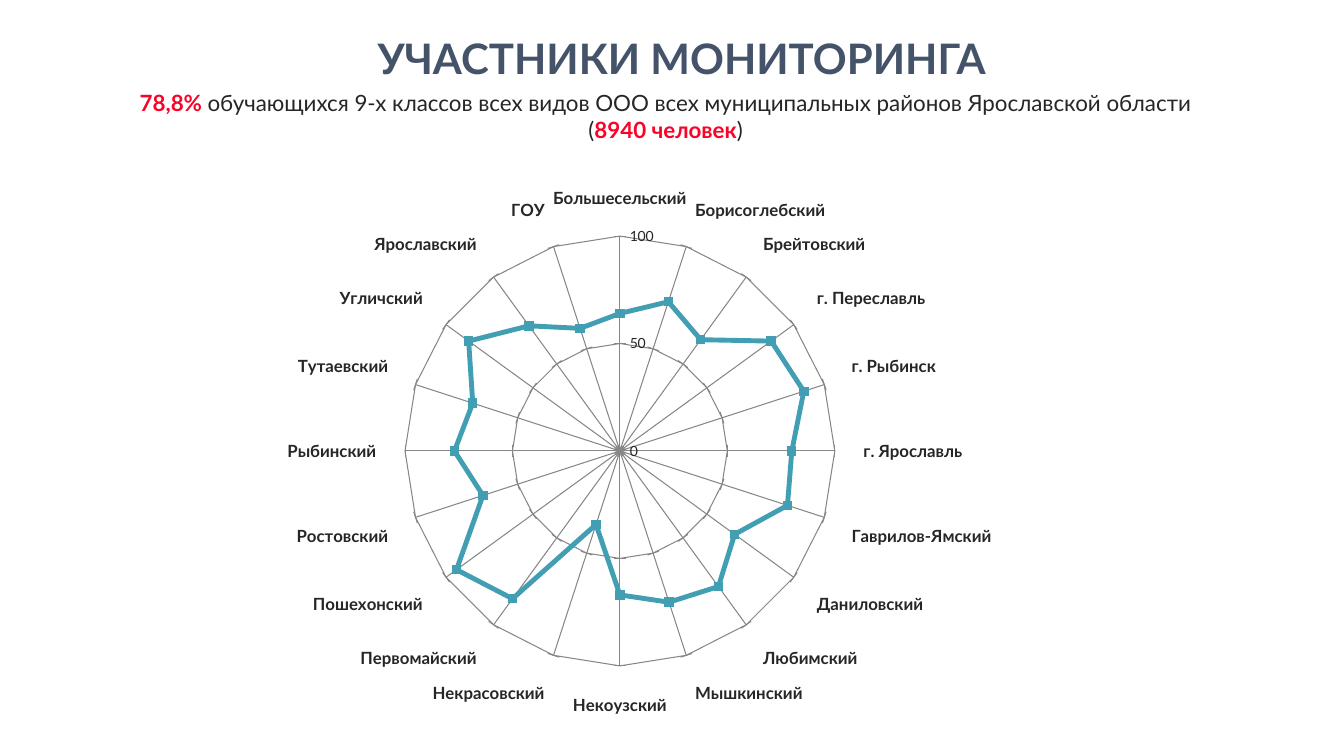
from dataclasses import dataclass

from lxml import etree
from pptx import Presentation
from pptx.chart.data import CategoryChartData
from pptx.dml.color import RGBColor
from pptx.enum.chart import XL_CHART_TYPE, XL_MARKER_STYLE, XL_TICK_MARK
from pptx.enum.text import MSO_ANCHOR, MSO_AUTO_SIZE, PP_ALIGN
from pptx.oxml.ns import qn
from pptx.util import Pt

RADAR = XL_CHART_TYPE.RADAR_MARKERS
SQUARE = XL_MARKER_STYLE.SQUARE
CROSS, OUT = XL_TICK_MARK.CROSS, XL_TICK_MARK.OUTSIDE
TOP, CENTER, FIXED = MSO_ANCHOR.TOP, PP_ALIGN.CENTER, MSO_AUTO_SIZE.NONE

FACE = "Lato"
HUES = {"title": "44536A", "text": "262626", "accent": "F90329",
        "line": "429EB2", "grid": "868686"}


@dataclass
class Box:
    left: float
    top: float
    width: float
    height: float


@dataclass
class Part:
    text: str
    hue: str = "text"
    bold: bool = False


@dataclass
class Block:
    box: Box
    size: float
    space: float
    lines: list[list[Part]]


TITLE = Block(Box(34.5, 1.4, 905, 54.7), 30, 1.5,
              [[Part("УЧАСТНИКИ МОНИТОРИНГА", "title", True)]])
SCOPE = Block(Box(34.5, 59.8, 882, 46), 16, 1.0, [
    [Part("78,8% ", "accent", True),
     Part("обучающихся 9-х классов всех видов ООО всех муниципальных "
          "районов Ярославской области")],
    [Part("("), Part("8940 человек", "accent", True), Part(")")],
])
CHART = Box(88.6, 120.2, 738, 404)
PLOT = {"x": 0.27, "y": 0.12, "w": 0.42, "h": 0.76}
SHARES = {
    "Большесельский": 64, "Борисоглебский": 73, "Брейтовский": 64,
    "г. Переславль": 87, "г. Рыбинск": 90, "г. Ярославль": 80,
    "Гаврилов-Ямский": 82, "Даниловский": 66, "Любимский": 78,
    "Мышкинский": 74, "Некоузский": 67, "Некрасовский": 36,
    "Первомайский": 85, "Пошехонский": 94, "Ростовский": 67,
    "Рыбинский": 77, "Тутаевский": 72, "Угличский": 87,
    "Ярославский": 72, "ГОУ": 60,
}


def tint(name: str) -> RGBColor:
    return RGBColor.from_string(HUES[name])


def style(font, size: float, hue: str, bold: bool) -> None:
    font.name, font.size, font.bold = FACE, Pt(size), bold
    font.color.rgb = tint(hue)


def fill_text(shape, block: Block) -> None:
    box = block.box
    shape.left, shape.top = Pt(box.left), Pt(box.top)
    shape.width, shape.height = Pt(box.width), Pt(box.height)
    frame = shape.text_frame
    frame.word_wrap, frame.auto_size = True, FIXED
    frame.vertical_anchor = TOP
    for i, line in enumerate(block.lines):
        para = frame.add_paragraph() if i else frame.paragraphs[0]
        para.alignment, para.line_spacing = CENTER, block.space
        para.space_before = Pt(0)
        # Centred lines carry no bullet or indent
        props = para._p.get_or_add_pPr()
        props.set("marL", "0")
        props.set("indent", "0")
        etree.SubElement(props, qn("a:buNone"))
        for part in line:
            run = para.add_run()
            run.text = part.text
            style(run.font, block.size, part.hue, part.bold)


def style_axis(axis, size: float, bold: bool, tick) -> None:
    style(axis.tick_labels.font, size, "text", bold)
    axis.major_tick_mark = tick
    axis.has_major_gridlines = True
    for form in (axis.format, axis.major_gridlines.format):
        form.line.color.rgb = tint("grid")
        form.line.width = Pt(0.75)


def place_plot(chart) -> None:
    area = chart._chartSpace.chart.plotArea
    for old in area.findall(qn("c:layout")):
        area.remove(old)
    layout = etree.Element(qn("c:layout"))
    area.insert(0, layout)
    inner = etree.SubElement(layout, qn("c:manualLayout"))
    marks = {"layoutTarget": "inner", "xMode": "edge", "yMode": "edge", **PLOT}
    for tag, val in marks.items():
        etree.SubElement(inner, qn("c:" + tag)).set("val", str(val))


def add_radar(slide, box: Box) -> None:
    data = CategoryChartData()
    data.categories = list(SHARES)
    data.add_series("Series 1", list(SHARES.values()))
    chart = slide.shapes.add_chart(
        RADAR, Pt(box.left), Pt(box.top), Pt(box.width), Pt(box.height), data
    ).chart
    chart.has_legend = chart.has_title = False
    style(chart.font, 18, "text", False)
    place_plot(chart)

    # Axes
    style_axis(chart.category_axis, 12, True, OUT)
    scale = chart.value_axis
    style_axis(scale, 10, False, CROSS)
    scale.minimum_scale, scale.maximum_scale, scale.major_unit = 0, 100, 50
    scale.tick_labels.number_format = "General"
    scale.tick_labels.number_format_is_linked = False

    # Series line and markers
    plot = chart.plots[0]
    plot.vary_by_categories = False
    series = plot.series[0]
    series.format.line.color.rgb = tint("line")
    series.format.line.width = Pt(3.5)
    mark = series.marker
    mark.style, mark.size = SQUARE, 6
    mark.format.fill.solid()
    mark.format.fill.fore_color.rgb = tint("line")
    mark.format.line.color.rgb = tint("line")


def main() -> None:
    deck = Presentation()
    deck.slide_width, deck.slide_height = Pt(960), Pt(540)
    slide = deck.slides.add_slide(deck.slide_layouts[1])

    # Heading and scope
    fill_text(slide.shapes.title, TITLE)
    fill_text(slide.placeholders[1], SCOPE)

    # Share of pupils by district
    add_radar(slide, CHART)
    deck.save("out.pptx")


if __name__ == "__main__":
    main()
